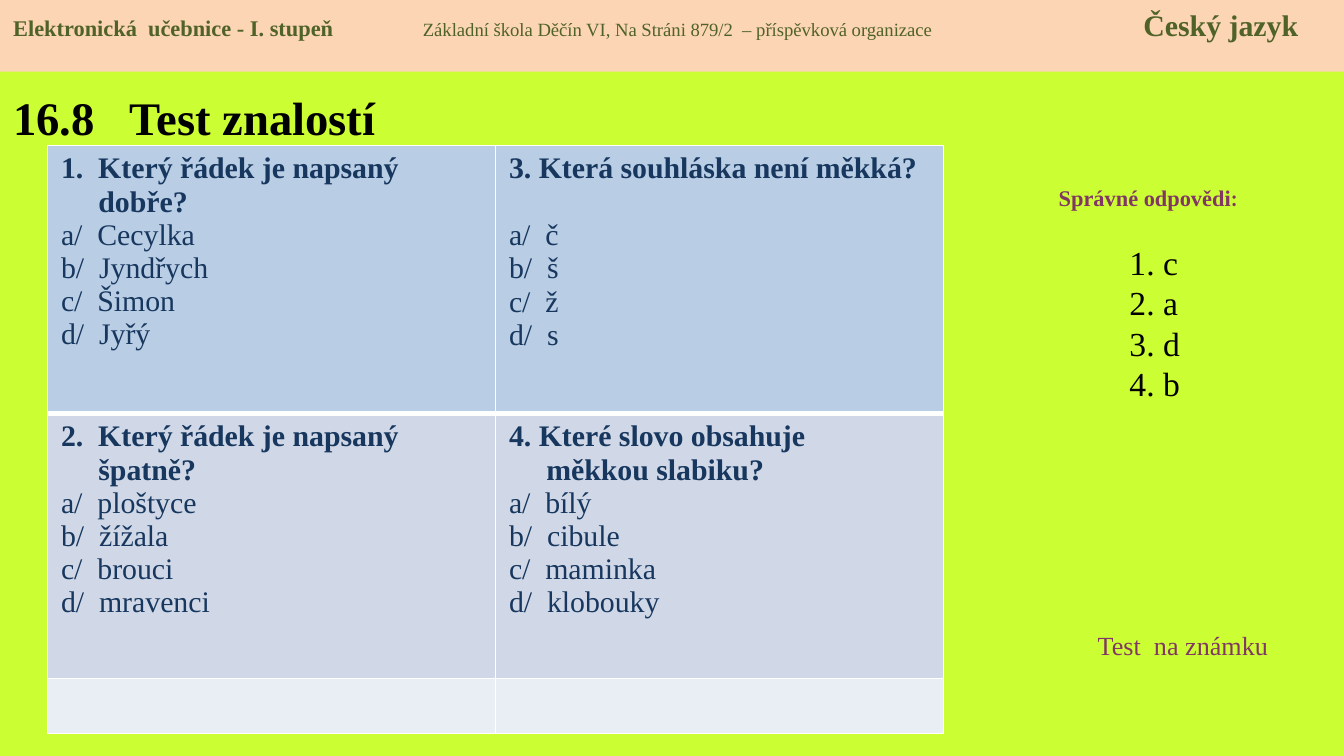
import pptx
import pptx.util
import pptx.dml.color
import pptx.enum.text
import pptx.enum.shapes
import pptx.oxml
import pptx.oxml.ns

Pt = pptx.util.Pt
Align = pptx.enum.text.PP_ALIGN
Anchor = pptx.enum.text.MSO_ANCHOR
NS = pptx.oxml.ns.nsdecls("a")


def tint(code):
    return pptx.dml.color.RGBColor.from_string(code)


def write(para, text, size=16, font="Times New Roman", color="000000",
          bold=False, align=None, left=0, hang=0, before=0, line=None,
          number=False, tabs=()):
    run = para.add_run()
    run.text = text
    run.font.size = Pt(size)
    run.font.name = font
    run.font.bold = bold
    run.font.color.rgb = tint(color)
    if align is not None:
        para.alignment = align
    if before:
        para.space_before = Pt(before)
    if line:
        para.line_spacing = Pt(line)
    props = para._p.get_or_add_pPr()
    if left:
        props.set("marL", str(Pt(left)))
        props.set("indent", str(Pt(-hang)))
    if number:
        props.append(pptx.oxml.parse_xml(
            f'<a:buFont {NS} typeface="{font}"/>'))
        props.append(pptx.oxml.parse_xml(
            f'<a:buAutoNum {NS} type="arabicPeriod"/>'))
    if tabs:
        stops = "".join(f'<a:tab pos="{Pt(stop)}" algn="l"/>' for stop in tabs)
        props.append(pptx.oxml.parse_xml(f"<a:tabLst {NS}>{stops}</a:tabLst>"))


class Page:
    ink = "17375E"
    plum = "813763"
    green = "4F6228"

    def __init__(self, deck, back):
        self.slide = deck.slides.add_slide(deck.slide_layouts[6])
        self.slide.background.fill.solid()
        self.slide.background.fill.fore_color.rgb = tint(back)

    def label(self, x, y, w, h, wrap=True, anchor=Anchor.TOP):
        frame = self.slide.shapes.add_textbox(Pt(x), Pt(y), Pt(w), Pt(h)).text_frame
        frame.word_wrap = wrap
        frame.vertical_anchor = anchor
        return frame

    def band(self, x, y, w, h, color):
        kind = pptx.enum.shapes.MSO_SHAPE.RECTANGLE
        shape = self.slide.shapes.add_shape(kind, Pt(x), Pt(y), Pt(w), Pt(h))
        shape.shadow.inherit = False
        shape.fill.solid()
        shape.fill.fore_color.rgb = tint(color)
        shape.line.fill.background()
        shape.text_frame.vertical_anchor = Anchor.TOP
        return shape.text_frame

    def grid(self, x, y, widths, heights):
        table = self.slide.shapes.add_table(
            len(heights), len(widths), Pt(x), Pt(y),
            Pt(sum(widths)), Pt(sum(heights))).table
        table.first_row = table.horz_banding = False
        for col, width in zip(table.columns, widths):
            col.width = Pt(width)
        for row, height in zip(table.rows, heights):
            row.height = Pt(height)
        return table

    def cell(self, cell, color, top=1, foot=1):
        props = cell._tc.get_or_add_tcPr()
        for side, width in zip("LRTB", (1, 1, top, foot)):
            props.append(pptx.oxml.parse_xml(
                f'<a:ln{side} {NS} w="{Pt(width)}"><a:solidFill>'
                f'<a:srgbClr val="FFFFFF"/></a:solidFill></a:ln{side}>'))
        cell.fill.solid()
        cell.fill.fore_color.rgb = tint(color)

    def quiz(self, cell, head, rest, picks):
        frame = cell.text_frame
        write(frame.paragraphs[0], head, color=self.ink, bold=True)
        if rest:
            write(frame.add_paragraph(), rest, color=self.ink, bold=True, left=20)
        for i, (mark, pick) in enumerate(zip("abcd", picks)):
            gap = 18 if i == 0 and not rest else 0
            write(frame.add_paragraph(), f"{mark}/  {pick}", color=self.ink,
                  left=27, hang=27, before=gap)


deck = pptx.Presentation()
deck.slide_width, deck.slide_height = Pt(720), Pt(405)
page = Page(deck, "CCFF33")

title = page.label(0, 39, 292, 47, anchor=Anchor.MIDDLE)
write(title.paragraphs[0], "16.8\tTest znalostí", size=25, bold=True, tabs=[62.5])

key = page.label(558.5, 95, 113, 22, wrap=False).paragraphs[0]
write(key, "Správné odpovědi", size=12, color=page.plum, bold=True, align=Align.CENTER)
write(key, ":", size=12, font="Calibri", color=page.plum, bold=True)

tests = [
    [("1.  Který řádek je napsaný", "dobře?",
      ["Cecylka", "Jyndřych", "Šimon", "Jyřý"]),
     ("3. Která souhláska není měkká?", "", ["č", "š", "ž", "s"])],
    [("2.  Který řádek je napsaný", "špatně?",
      ["ploštyce", "žížala", "brouci", "mravenci"]),
     ("4. Které slovo obsahuje", "měkkou slabiku?",
      ["bílý", "cibule", "maminka", "klobouky"])],
    [None, None],
]
looks = [("B9CDE5", 1, 3), ("D0D8E8", 3, 1), ("E9EDF4", 1, 1)]
table = page.grid(25.5, 78, [240, 240], [143.5, 142, 29.5])
for r, (row, look) in enumerate(zip(tests, looks)):
    for c, test in enumerate(row):
        page.cell(table.cell(r, c), *look)
        if test:
            page.quiz(table.cell(r, c), *test)

keys = page.label(598, 126, 40, 109, wrap=False)
for i, letter in enumerate("cadb"):
    para = keys.add_paragraph() if i else keys.paragraphs[0]
    write(para, letter, size=18, left=18, hang=18, line=21.6, number=True)

mark = page.label(581, 333.5, 125, 24, wrap=False)
write(mark.paragraphs[0], "Test  na známku", size=14, color=page.plum)

head = page.band(0, 0, 720, 38.5, "FCD5B5").paragraphs[0]
write(head, "Elektronická  učebnice - I. stupeň\t", size=12, color=page.green,
      bold=True, align=Align.LEFT, tabs=[219.5, 605.5])
write(head, "Základní škola Děčín VI, Na Stráni 879/2  – příspěvková organizace\t",
      size=10, color=page.green)
write(head, "Český jazyk", color=page.green, bold=True)

deck.save("out.pptx")
